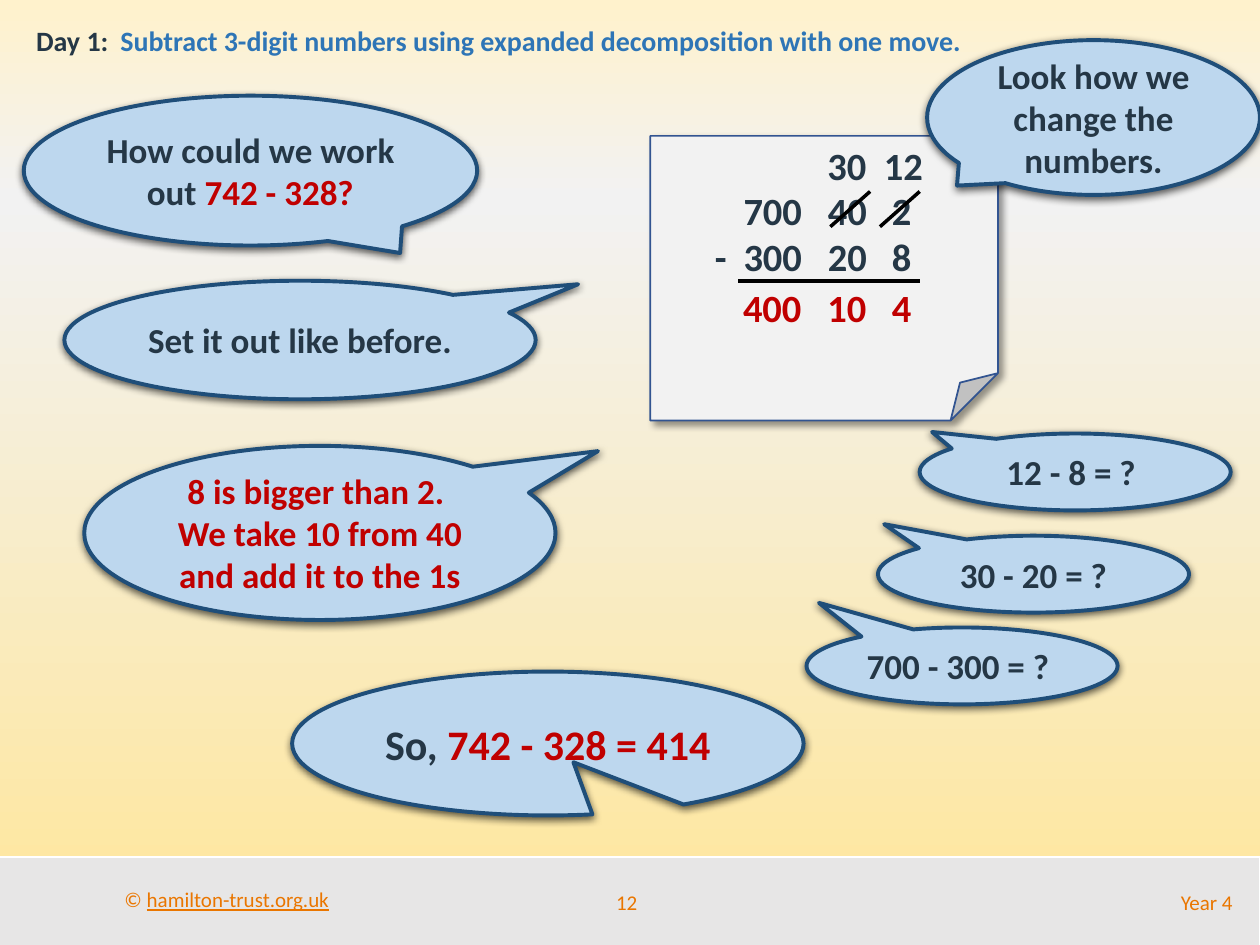
"""Build the Day 1 slide on subtracting 3-digit numbers by expanded decomposition."""
from copy import deepcopy

from lxml.etree import SubElement
from pptx import Presentation
from pptx.dml.color import RGBColor
from pptx.enum.shapes import MSO_CONNECTOR, MSO_SHAPE
from pptx.enum.text import MSO_ANCHOR, PP_ALIGN
from pptx.oxml.ns import qn
from pptx.util import Cm, Pt

INK = RGBColor(0x25, 0x37, 0x46)
RED = RGBColor(0xC0, 0x00, 0x00)
BLUE = RGBColor(0x2E, 0x75, 0xB6)
ORANGE = RGBColor(0xEA, 0x76, 0x00)
SKY = RGBColor(0xBD, 0xD7, 0xEE)
NAVY = RGBColor(0x1F, 0x4E, 0x79)
PAPER = RGBColor(0xF2, 0xF2, 0xF2)
PAPER_EDGE = RGBColor(0x32, 0x54, 0x91)
GREY = RGBColor(0xE7, 0xE6, 0xE6)
WHITE = RGBColor(0xFF, 0xFF, 0xFF)
BLACK = RGBColor(0x00, 0x00, 0x00)
CREAM = RGBColor(0xFF, 0xF2, 0xCC)
GOLD = RGBColor(0xFF, 0xE6, 0x99)

BUBBLE_SHADOW = (63, 4.5, 1.5, 90)
SHEET_SHADOW = (40, 4, 3, 45)


class SlideBuilder:
    font = "Calibri"

    def __init__(self, page):
        self.page = page

    def background(self, stops):
        fill = self.page.background.fill
        fill.gradient()
        fill.gradient_angle = 270
        stop_list = self.page.element.find(".//" + qn("a:gsLst"))
        while len(stop_list) < len(stops):
            stop_list.append(deepcopy(stop_list[0]))
        for stop, (position, color) in zip(fill.gradient_stops, stops):
            stop.position = position
            stop.color.rgb = color

    def fill_text(self, shape, paragraphs, size, bold=True, align=PP_ALIGN.LEFT,
                  anchor=MSO_ANCHOR.TOP, tabs=(), wrap=True):
        frame = shape.text_frame
        frame.word_wrap = wrap
        frame.vertical_anchor = anchor
        for index, spans in enumerate(paragraphs):
            para = frame.add_paragraph() if index else frame.paragraphs[0]
            para.alignment = align
            if tabs:
                tab_list = SubElement(para._p.get_or_add_pPr(), qn("a:tabLst"))
                for stop in tabs:
                    SubElement(tab_list, qn("a:tab"), pos=str(Cm(stop)), algn="l")
            for text, color, *underline in spans:
                span = para.add_run()
                span.text = text
                span.font.name = self.font
                span.font.size = Pt(size)
                span.font.bold = bold
                span.font.color.rgb = color
                if underline:
                    span.font.underline = True

    def text(self, place, paragraphs, size, **style):
        box = self.page.shapes.add_textbox(*map(Cm, place))
        self.fill_text(box, paragraphs, size, **style)

    def shape(self, kind, place, fill, edge, weight, shadow=None):
        shape = self.page.shapes.add_shape(kind, *map(Cm, place))
        shape.fill.solid()
        shape.fill.fore_color.rgb = fill
        shape.line.color.rgb = edge
        shape.line.width = Pt(weight)
        shape.shadow.inherit = False
        if shadow:
            alpha, blur, distance, angle = shadow
            effects = shape._element.spPr.find(qn("a:effectLst"))
            outer = SubElement(
                effects, qn("a:outerShdw"), blurRad=str(Pt(blur)), dist=str(Pt(distance)),
                dir=str(angle * 60000), algn="ctr", rotWithShape="0")
            tint = SubElement(outer, qn("a:srgbClr"), val=str(BLACK))
            SubElement(tint, qn("a:alpha"), val=str(alpha * 1000))
        return shape

    def bubble(self, place, tail, paragraphs, size=20):
        bubble = self.shape(MSO_SHAPE.OVAL_CALLOUT, place, SKY, NAVY, 2.25, BUBBLE_SHADOW)
        bubble.adjustments[0], bubble.adjustments[1] = tail
        self.fill_text(bubble, paragraphs, size, align=PP_ALIGN.CENTER, anchor=MSO_ANCHOR.MIDDLE)

    def line(self, *ends):
        line = self.page.shapes.add_connector(MSO_CONNECTOR.STRAIGHT, *map(Cm, ends))
        line.line.color.rgb = BLACK
        line.line.width = Pt(2)
        SubElement(line._element.spPr, qn("a:effectLst"))


def add_footer(slide):
    slide.shape(MSO_SHAPE.RECTANGLE, (-0.15, 17.27, 25.55, 1.83), GREY, WHITE, 1)
    slide.text((2.26, 17.75, 4.67, 0.76),
               [[("© ", ORANGE), ("hamilton-trust.org.uk", ORANGE, True)]],
               12, bold=False, wrap=False)
    for left, width, text, align in ((11.63, 2.01, "12", PP_ALIGN.CENTER),
                                     (16.51, 8.59, "Year 4", PP_ALIGN.RIGHT)):
        slide.text((left, 17.68, width, 1.02), [[(text, ORANGE)]], 12,
                   bold=False, align=align, anchor=MSO_ANCHOR.MIDDLE)


def add_calculation(slide):
    sheet = slide.shape(MSO_SHAPE.FOLDED_CORNER, (13.11, 2.74, 7.01, 5.74),
                        PAPER, PAPER_EDGE, 1, SHEET_SHADOW)
    sheet.text_frame.margin_left = Cm(1.3)
    sheet.text_frame.margin_top = Cm(1.03)
    slide.fill_text(sheet, [[("\t700\t40\t2", INK)], [("-\t300\t20\t8", INK)]], 22,
                    tabs=(0.58, 2.28, 3.57))
    slide.line(14.88, 5.66, 18.54, 5.66)
    for left, digits in ((14.73, "400"), (16.43, "10"), (17.73, "4")):
        slide.text((left, 5.61, 1.9, 1.19), [[(digits, RED)]], 22)
    for left in (16.74, 17.74):
        slide.line(left, 4.57, left + 0.8, 3.86)
    slide.text((16.43, 2.74, 2.54, 1.19), [[("30\t12", INK)]], 22, tabs=(1.14,), wrap=False)


def add_bubbles(slide):
    slide.bubble((0.48, 1.93, 9.14, 3.02), (0.33, 0.55),
                 [[("How could we work out ", INK), ("742 - 328?", RED)]])
    slide.bubble((1.3, 5.66, 9.5, 2.39), (0.59, -0.47), [[("Set it out like before.", INK)]])
    slide.bubble((1.7, 8.99, 9.5, 3.51), (0.59, -0.47),
                 [[("8 is bigger than 2. ", RED)],
                  [("We take 10 from 40 and add it to the 1s", RED)]])
    slide.bubble((5.89, 13.54, 10.31, 2.9), (0.05, 0.13),
                 [[("So, ", INK), ("742 - 328 = 414", RED)]], size=24)
    for left, top, tail, question in ((18.54, 8.74, (-0.46, -0.52), "12 - 8 = ? "),
                                      (17.7, 10.8, (-0.48, -0.65), "30 - 20 = ?"),
                                      (16.26, 12.65, (-0.46, -0.82), "700 - 300 = ? ")):
        slide.bubble((left, top, 6.27, 1.55), tail, [[(question, INK)]])
    slide.bubble((18.69, 0.81, 6.71, 3.12), (-0.41, 0.44),
                 [[("Look how we change the numbers.", INK)]])


def main():
    deck = Presentation()
    deck.slide_width, deck.slide_height = Cm(25.4), Cm(19.05)
    slide = SlideBuilder(deck.slides.add_slide(deck.slide_layouts[6]))
    slide.background([(0, CREAM), (0.21, PAPER), (1, GOLD)])
    add_footer(slide)
    slide.text((0.48, 0.36, 24.23, 0.94),
               [[("Day 1:\t", INK),
                 ("Subtract 3-digit numbers using expanded decomposition with one move.", BLUE)]],
               16, tabs=(1.7,))
    add_calculation(slide)
    add_bubbles(slide)
    deck.save("out.pptx")


if __name__ == "__main__":
    main()
